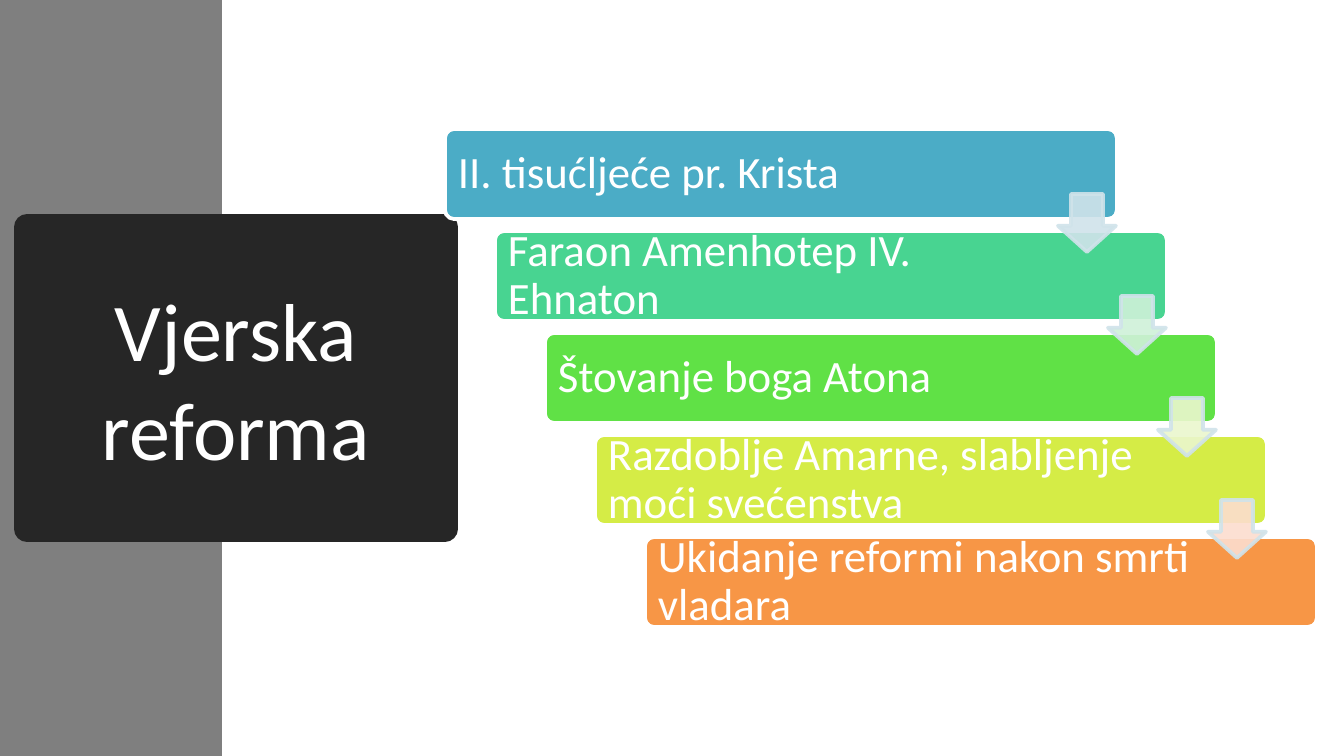
import pptx
import pptx.util
import pptx.dml.color
import pptx.enum.shapes
import pptx.enum.text
import pptx.oxml.ns
import lxml.etree

# Content
TITLE = "Vjerska reforma"
STEPS = [  # text, bar colour, colour of the arrow to the next step
    ("II. tisućljeće pr. Krista", "4BACC6", "D0E3EA"),
    ("Faraon Amenhotep IV. Ehnaton", "48D491", "CFF1D9"),
    ("Štovanje boga Atona", "60E146", "EBF7CE"),
    ("Razdoblje Amarne, slabljenje moći svećenstva", "D5EC46", "FCDDCF"),
    ("Ukidanje reformi nakon smrti vladara", "F79646", None),
]

# Layout in px
SLIDE_W, SLIDE_H = 1344, 756
BAR_X, BAR_Y, BAR_W, BAR_H = 445, 129, 672, 90
STEP_X, STEP_Y = 50, 102
TEXT_W, PAD = 563, 13
ARROW_X, ARROW_Y, ARROW_SIZE = 1058, 194, 58

SHAPE = pptx.enum.shapes.MSO_SHAPE
ALIGN = pptx.enum.text.PP_ALIGN


def px(n):
    return pptx.util.Emu(round(n * 914400 / 134.4))


def rgb(value):
    return pptx.dml.color.RGBColor.from_string(value)


def add_alpha(element, percent):
    for color in element.iter(pptx.oxml.ns.qn("a:srgbClr")):
        alpha = lxml.etree.SubElement(color, pptx.oxml.ns.qn("a:alpha"))
        alpha.set("val", str(percent * 1000))


def add_box(kind, x, y, w, h, fill, line=None, width=2, adjust=(), alpha=None):
    sp = slide.shapes.add_shape(kind, px(x), px(y), px(w), px(h))
    sp.shadow.inherit = False
    for i, value in enumerate(adjust):
        sp.adjustments[i] = value
    sp.fill.solid()
    sp.fill.fore_color.rgb = rgb(fill)
    if line:
        sp.line.color.rgb = rgb(line)
        sp.line.width = pptx.util.Pt(width)
        ln = sp.element.spPr.find(pptx.oxml.ns.qn("a:ln"))
        lxml.etree.SubElement(ln, pptx.oxml.ns.qn("a:round"))
    else:
        sp.line.fill.background()
    if alpha:
        add_alpha(sp.element.spPr, alpha)
    return sp


def write(sp, text, size, align=ALIGN.LEFT, spacing=1.0, pad=PAD):
    tf = sp.text_frame
    tf.word_wrap = True
    tf.vertical_anchor = pptx.enum.text.MSO_ANCHOR.MIDDLE
    tf.margin_left = tf.margin_right = tf.margin_top = tf.margin_bottom = px(pad)
    p = tf.paragraphs[0]
    p.alignment = align
    p.line_spacing = spacing
    r = p.add_run()
    r.text = text
    r.font.size = pptx.util.Pt(size)
    r.font.name = "Calibri"
    r.font.color.rgb = rgb("FFFFFF")


prs = pptx.Presentation()
prs.slide_width, prs.slide_height = px(SLIDE_W), px(SLIDE_H)
slide = prs.slides.add_slide(prs.slide_layouts[6])

# Side band and title block
add_box(SHAPE.RECTANGLE, 0, 0, 222, SLIDE_H, "7F7F7F")
title = add_box(SHAPE.RECTANGLE, 27, 227, 418, 302, "262626", "262626", 13.75)
write(title, TITLE, 44, ALIGN.CENTER)

# Staircase of bars
for i, (text, color, _) in enumerate(STEPS):
    x, y = BAR_X + i * STEP_X, BAR_Y + i * STEP_Y
    add_box(SHAPE.ROUNDED_RECTANGLE, x, y, BAR_W, BAR_H, color, "FFFFFF", adjust=[0.1])
    label = slide.shapes.add_textbox(px(x), px(y), px(TEXT_W), px(BAR_H))
    write(label, text, 24, spacing=0.9)

# Arrows between the bars, in front of them
for i, (_, _, color) in enumerate(STEPS[:-1]):
    add_box(SHAPE.DOWN_ARROW, ARROW_X + i * STEP_X, ARROW_Y + i * STEP_Y,
            ARROW_SIZE, ARROW_SIZE, color, "D0E3EA", adjust=[0.55, 0.45], alpha=90)

prs.save("out.pptx")
